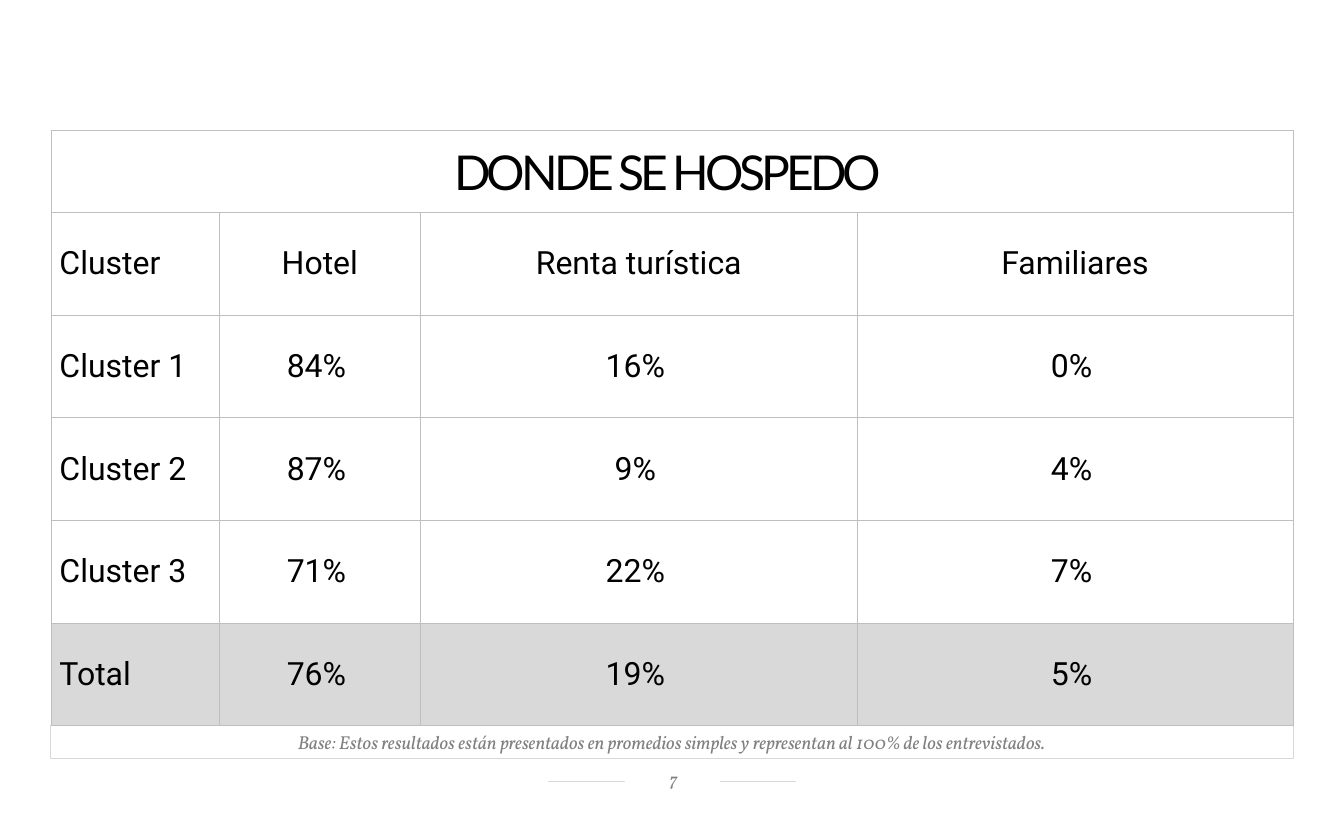
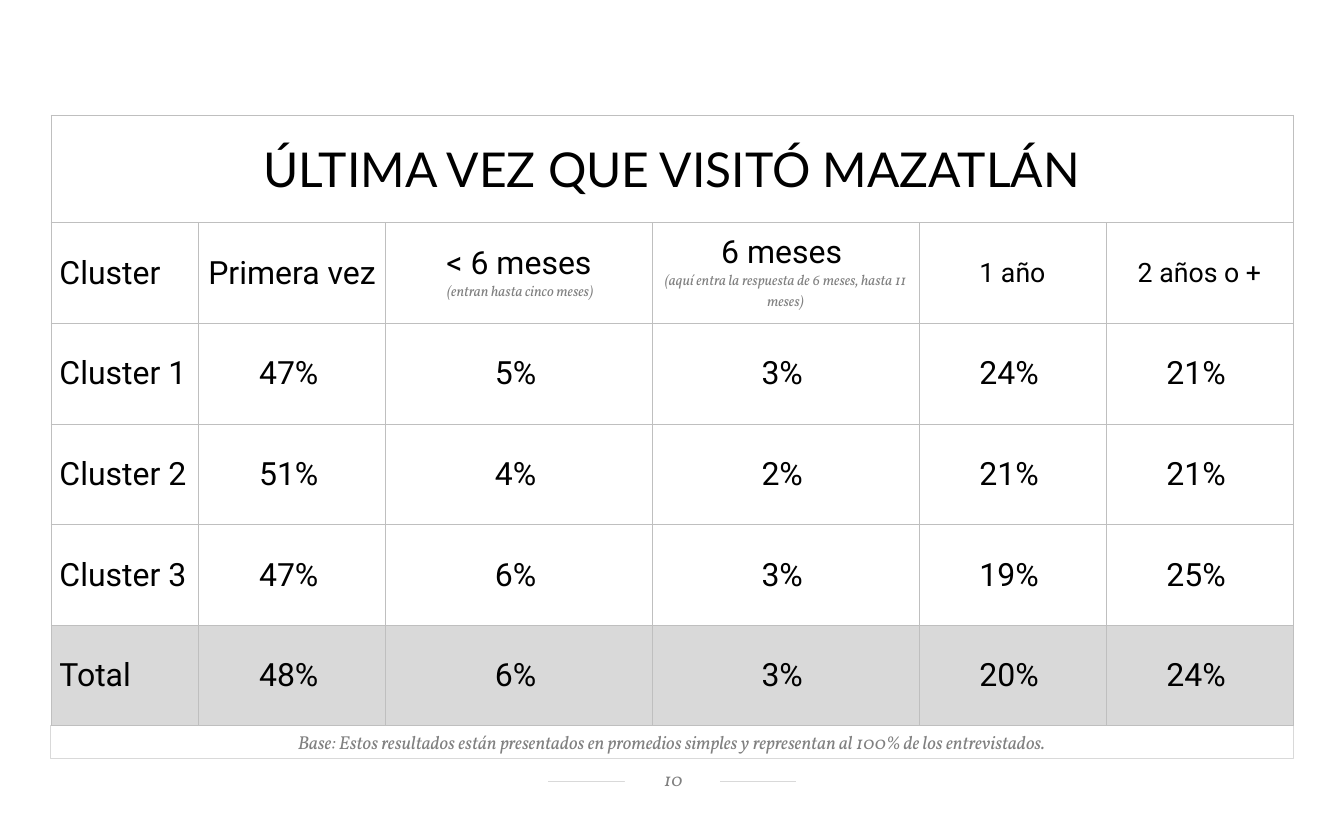
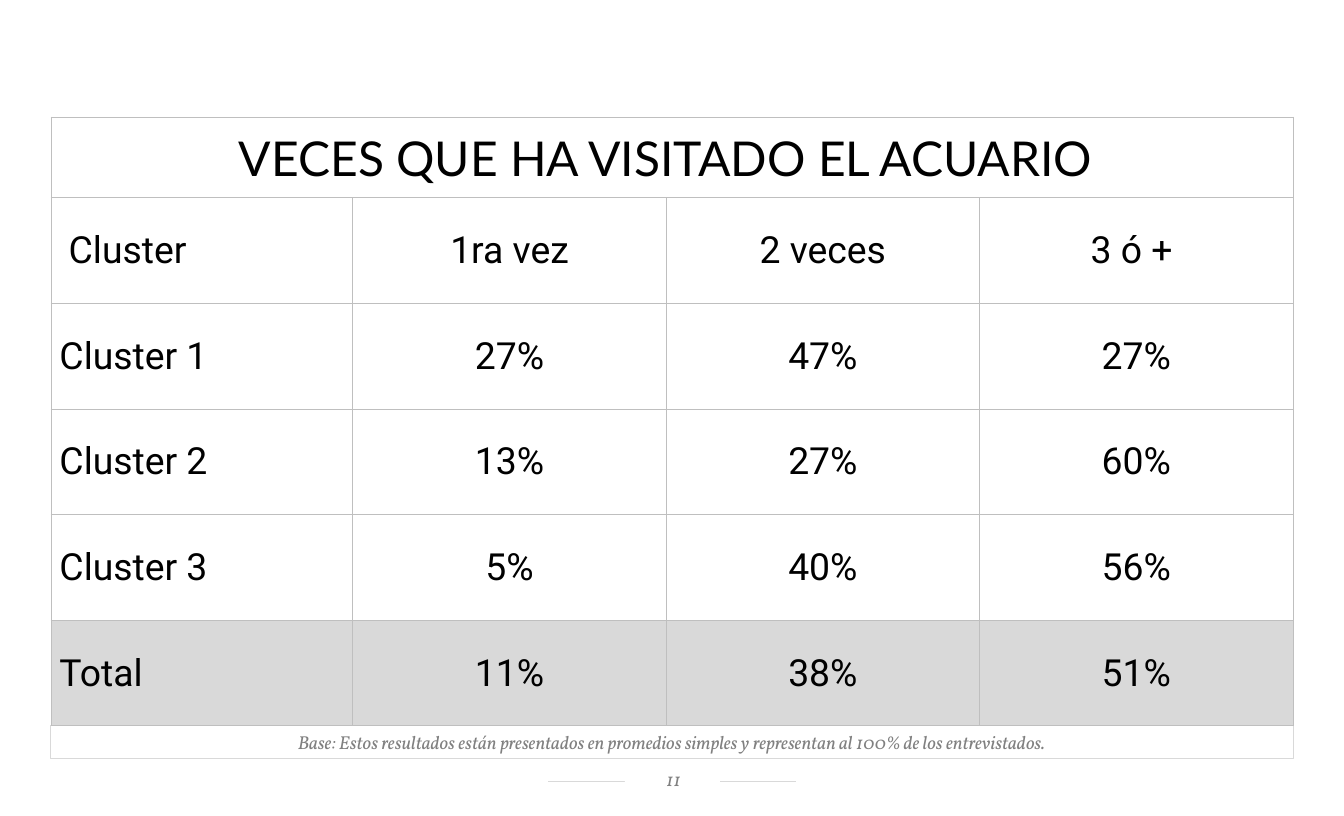
from lxml import etree
from pptx import Presentation
from pptx import util as u
from pptx.dml.color import RGBColor
from pptx.enum import shapes, text
from pptx.oxml import ns

INK = {"black": "000000", "white": "FFFFFF", "gray": "808080",
       "band": "D9D9D9", "grid": "BFBFBF"}
LEFT, WIDTH, BASE = 0.53, 12.94, 7.56
NOTE = {"font": "Vollkorn", "color": "gray", "italic": True}
SOURCE = ("Base: Estos resultados están presentados en promedios simples "
          "y representan al 100% de los entrevistados.")


def rgb(name):
    return RGBColor.from_string(INK[name])


def write(para, words, size=24, font="Roboto", color="black",
          italic=False, track=0, indent=None):
    run = para.add_run()
    run.text = words
    run.font.size = u.Pt(size)
    run.font.name = font
    run.font.italic = italic
    run.font.color.rgb = rgb(color)
    if track:
        run.font._element.set("spc", str(track * 100))
    if indent is None:
        para.alignment = text.PP_ALIGN.CENTER
    else:
        para.alignment = text.PP_ALIGN.LEFT
        props = para._p.get_or_add_pPr()
        props.set("marL", str(u.Inches(indent)))
        props.set("indent", "0")


def pad(part, left, top, right, bottom):
    part.margin_left, part.margin_top = u.Inches(left), u.Inches(top)
    part.margin_right, part.margin_bottom = u.Inches(right), u.Inches(bottom)


def plate(slide, box, words, line=None):
    shape = slide.shapes.add_shape(
        shapes.MSO_SHAPE.RECTANGLE, *map(u.Inches, box))
    shape.shadow.inherit = False
    shape.fill.solid()
    shape.fill.fore_color.rgb = rgb("white")
    if line:
        shape.line.color.rgb = rgb(line)
        shape.line.width = u.Pt(0.75)
    else:
        shape.line.fill.background()
    frame = shape.text_frame
    frame.word_wrap = True
    write(frame.paragraphs[0], words, size=14, **NOTE)
    return frame


def footer(slide, box, page):
    left, top, width, height = box
    mid = top + 0.16
    rule = slide.shapes.add_connector(
        shapes.MSO_CONNECTOR.STRAIGHT, u.Inches(left), u.Inches(mid),
        u.Inches(left + width), u.Inches(mid))
    rule.line.color.rgb = rgb("band")
    rule.line.width = u.Pt(0.5)
    etree.SubElement(rule._element.spPr, ns.qn("a:effectLst"))
    frame = plate(slide, (left + 0.8, top, 0.99, height), str(page))
    pad(frame, 0.12, 0.02, 0.1, 0.05)
    frame.vertical_anchor = text.MSO_ANCHOR.MIDDLE


def source(slide, box):
    frame = plate(slide, box, SOURCE, line="band")
    frame.vertical_anchor = text.MSO_ANCHOR.BOTTOM
    frame.auto_size = text.MSO_AUTO_SIZE.SHAPE_TO_FIT_TEXT


def border(cell):
    props = cell._tc.get_or_add_tcPr()
    for spot, side in enumerate(("lnL", "lnR", "lnT", "lnB")):
        line = etree.Element(ns.qn("a:" + side), w=str(u.Pt(0.5)))
        fill = etree.SubElement(line, ns.qn("a:solidFill"))
        etree.SubElement(fill, ns.qn("a:srgbClr"), val=INK["grid"])
        props.insert(spot, line)


def style(cell, color, right=0.01):
    pad(cell, 0.01, 0.01, right, 0)
    cell.vertical_anchor = text.MSO_ANCHOR.MIDDLE
    cell.fill.solid()
    cell.fill.fore_color.rgb = rgb(color)
    border(cell)


def results(slide, box, title, cols, top, heads, rows,
            size=24, track=0, right=0.08):
    left, y, width, height = box
    count = len(rows) + 2
    grid = slide.shapes.add_table(
        count, len(cols), *map(u.Inches, box)).table
    grid.first_row = grid.horz_banding = False
    for col, part in zip(grid.columns, cols):
        col.width = u.Inches(width * part / sum(cols))
    for n, row in enumerate(grid.rows):
        row.height = u.Inches(top if n == 0 else (height - top) / (count - 1))

    for cell in grid.rows[0].cells:
        style(cell, "white")
    head = grid.cell(0, 0)
    head.merge(grid.cell(0, len(cols) - 1))
    write(head.text_frame.paragraphs[0], title,
          size=36, font="Lato", track=track)

    for r, row in enumerate([heads] + rows, 1):
        for c, item in enumerate(row):
            cell = grid.cell(r, c)
            style(cell, "band" if r == count - 1 else "white",
                  right if r > 1 and c else 0.01)
            words, look, note = item if isinstance(item, tuple) else (item, size, "")
            frame = cell.text_frame
            write(frame.paragraphs[0], words, size=look,
                  indent=None if c else 0.08)
            if note:
                write(frame.add_paragraph(), note, size=11, **NOTE)


def page(deck, number, y, title, **table):
    slide = deck.slides.add_slide(deck.slide_layouts[6])
    footer(slide, (5.71, 7.98, 2.58, 0.29), number)
    source(slide, (LEFT, BASE, WIDTH, 0.34))
    results(slide, (LEFT, y, WIDTH, BASE - y), title, **table)


def rows(*values):
    names = ("Cluster 1", "Cluster 2", "Cluster 3", "Total")
    return [[name] + [f"{n}%" for n in line]
            for name, line in zip(names, values)]


def main():
    deck = Presentation()
    deck.slide_width, deck.slide_height = u.Inches(14), u.Inches(8.5)
    page(deck, 7, 1.36, "DONDE SE HOSPEDO ", track=-3, top=0.85,
         cols=(1.75, 2.1, 4.54, 4.54),
         heads=["Cluster", "Hotel", "Renta turística", "Familiares"],
         rows=rows((84, 16, 0), (87, 9, 4), (71, 22, 7), (76, 19, 5)))
    page(deck, 10, 1.2, "ÚLTIMA VEZ QUE VISITÓ MAZATLÁN", top=1.12,
         cols=(1.54, 1.95, 2.78, 2.78, 1.95, 1.95),
         heads=["Cluster", "Primera vez",
                ("< 6 meses", 24, " (entran hasta cinco meses)"),
                ("6 meses ", 24,
                 "(aquí entra la respuesta de 6 meses, hasta 11 meses)"),
                ("1 año", 20, ""), ("2 años o +", 20, "")],
         rows=rows((47, 5, 3, 24, 21), (51, 4, 2, 21, 21),
                   (47, 6, 3, 19, 25), (48, 6, 3, 20, 24)))
    page(deck, 11, 1.22, "VECES QUE HA VISITADO EL ACUARIO ", top=0.84,
         cols=(3.15, 3.27, 3.27, 3.27), size=28, right=0.01,
         heads=[" Cluster", "1ra vez", "2 veces", "3 ó + "],
         rows=rows((27, 47, 27), (13, 27, 60), (5, 40, 56), (11, 38, 51)))
    deck.save("out.pptx")


if __name__ == "__main__":
    main()
